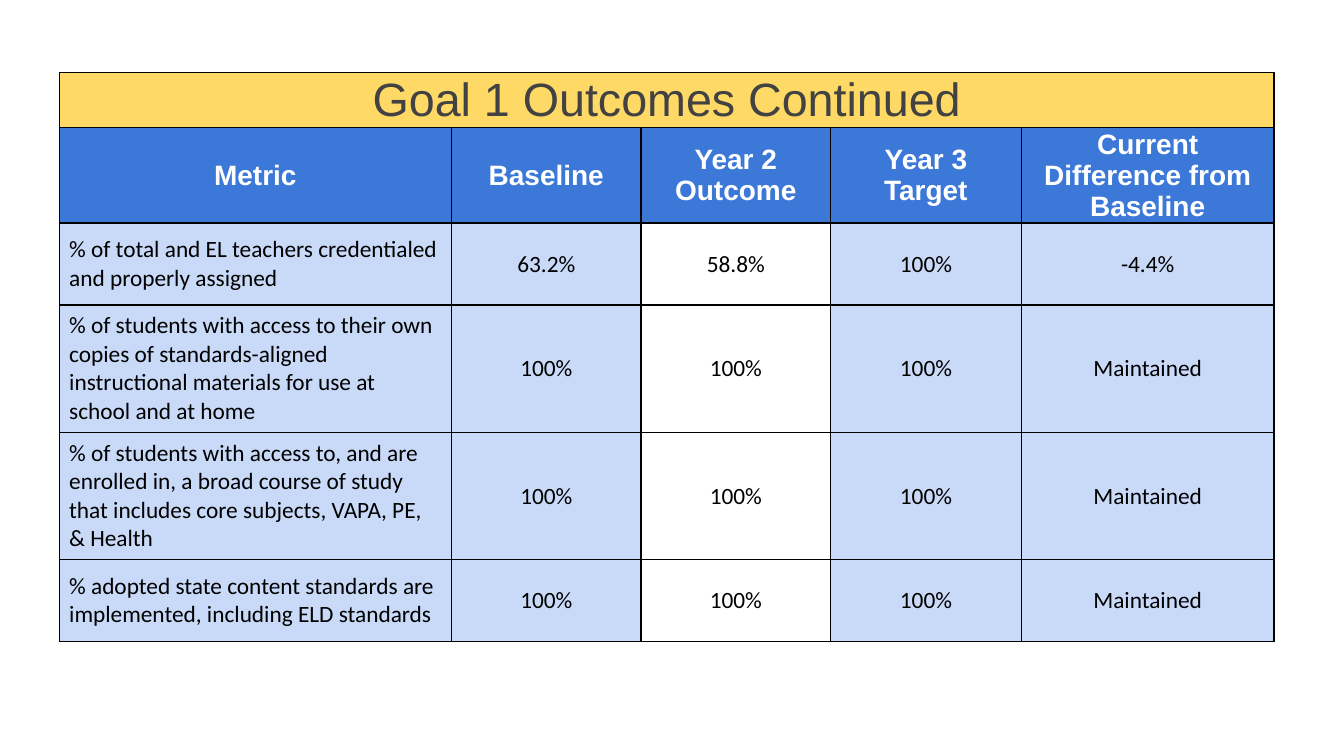
import lxml.etree
import pptx
import pptx.dml.color
import pptx.enum.text
import pptx.oxml.ns
import pptx.util

PX = 4572
SLIDE_SIZE = (2000, 1125)
TABLE_BOX = (88, 108, 1808, 712)
COLUMN_WIDTHS = (584, 282, 282, 284, 376)
ROW_HEIGHTS = (82, 142, 122, 122, 122, 122)
SIDE_MARGIN = 15
YELLOW, BLUE, PALE_BLUE = "FFD966", "3C78D8", "C9DAF8"
WHITE, BLACK, GRAY = "FFFFFF", "000000", "424242"

TITLE = "Goal 1 Outcomes Continued"
HEADERS = ("Metric", "Baseline", "Year 2 Outcome", "Year 3 Target",
           "Current Difference from Baseline")
OUTCOMES = (
    ("% of total and EL teachers credentialed and properly assigned",
     "63.2%", "58.8%", "100%", "-4.4%"),
    ("% of students with access to their own copies of standards-aligned "
     "instructional materials for use at school and at home",
     "100%", "100%", "100%", "Maintained"),
    ("% of students with access to, and are enrolled in, a broad course of "
     "study that includes core subjects, VAPA, PE, & Health",
     "100%", "100%", "100%", "Maintained"),
    ("% adopted state content standards are implemented, including ELD standards",
     "100%", "100%", "100%", "Maintained"),
)


def px(length):
    """Turn whole pixels into EMU."""
    return pptx.util.Emu(length * PX)


def color(value):
    """Turn a hex string into a colour."""
    return pptx.dml.color.RGBColor.from_string(value)


def add_borders(cell):
    """Draw a thin black line on all four sides of a cell."""
    properties = cell._tc.get_or_add_tcPr()
    for position, side in enumerate(("lnL", "lnR", "lnT", "lnB")):
        line = lxml.etree.Element(pptx.oxml.ns.qn(f"a:{side}"),
                                  w=str(pptx.util.Pt(0.75)))
        fill = lxml.etree.SubElement(line, pptx.oxml.ns.qn("a:solidFill"))
        lxml.etree.SubElement(fill, pptx.oxml.ns.qn("a:srgbClr"), val=BLACK)
        properties.insert(position, line)


def format_cell(cell, fill, vertical_margin):
    """Set the fill, borders, margins and anchor of a cell."""
    cell.fill.solid()
    cell.fill.fore_color.rgb = color(fill)
    cell.margin_left = cell.margin_right = px(SIDE_MARGIN)
    cell.margin_top = cell.margin_bottom = px(vertical_margin)
    cell.vertical_anchor = pptx.enum.text.MSO_ANCHOR.MIDDLE
    add_borders(cell)


def write_cell(cell, text, size, font_color, font_name="Arial", bold=False,
               alignment=pptx.enum.text.PP_ALIGN.CENTER):
    """Write one run of text into a cell."""
    paragraph = cell.text_frame.paragraphs[0]
    paragraph.alignment = alignment
    run = paragraph.add_run()
    run.text = text
    run.font.name = font_name
    run.font.size = pptx.util.Pt(size)
    run.font.bold = bold
    run.font.color.rgb = color(font_color)


def add_outcomes_table(slide, left, top, width, height):
    """Place the outcomes table in the given box."""
    table = slide.shapes.add_table(
        len(ROW_HEIGHTS), len(COLUMN_WIDTHS),
        px(left), px(top), px(width), px(height)).table
    table.first_row = table.horz_banding = False
    for column, column_width in zip(table.columns, COLUMN_WIDTHS):
        column.width = px(column_width)
    for row, row_height in zip(table.rows, ROW_HEIGHTS):
        row.height = px(row_height)

    for cell in table.rows[0].cells:
        format_cell(cell, YELLOW, 0)
    title_cell = table.cell(0, 0)
    title_cell.merge(table.cell(0, len(COLUMN_WIDTHS) - 1))
    write_cell(title_cell, TITLE, 25, GRAY)

    for cell, header in zip(table.rows[1].cells, HEADERS):
        format_cell(cell, BLUE, 0)
        write_cell(cell, header, 15, WHITE, bold=True)

    alignments = pptx.enum.text.PP_ALIGN
    for row_index, outcome in enumerate(OUTCOMES, start=2):
        for column_index, text in enumerate(outcome):
            cell = table.cell(row_index, column_index)
            format_cell(cell, WHITE if column_index == 2 else PALE_BLUE, 10)
            write_cell(cell, text, 12.5, BLACK, "Calibri",
                       alignment=alignments.CENTER if column_index else alignments.LEFT)


def main():
    """Build and save the presentation."""
    presentation = pptx.Presentation()
    presentation.slide_width, presentation.slide_height = map(px, SLIDE_SIZE)
    slide = presentation.slides.add_slide(presentation.slide_layouts[6])
    add_outcomes_table(slide, *TABLE_BOX)
    presentation.save("out.pptx")


if __name__ == "__main__":
    main()
